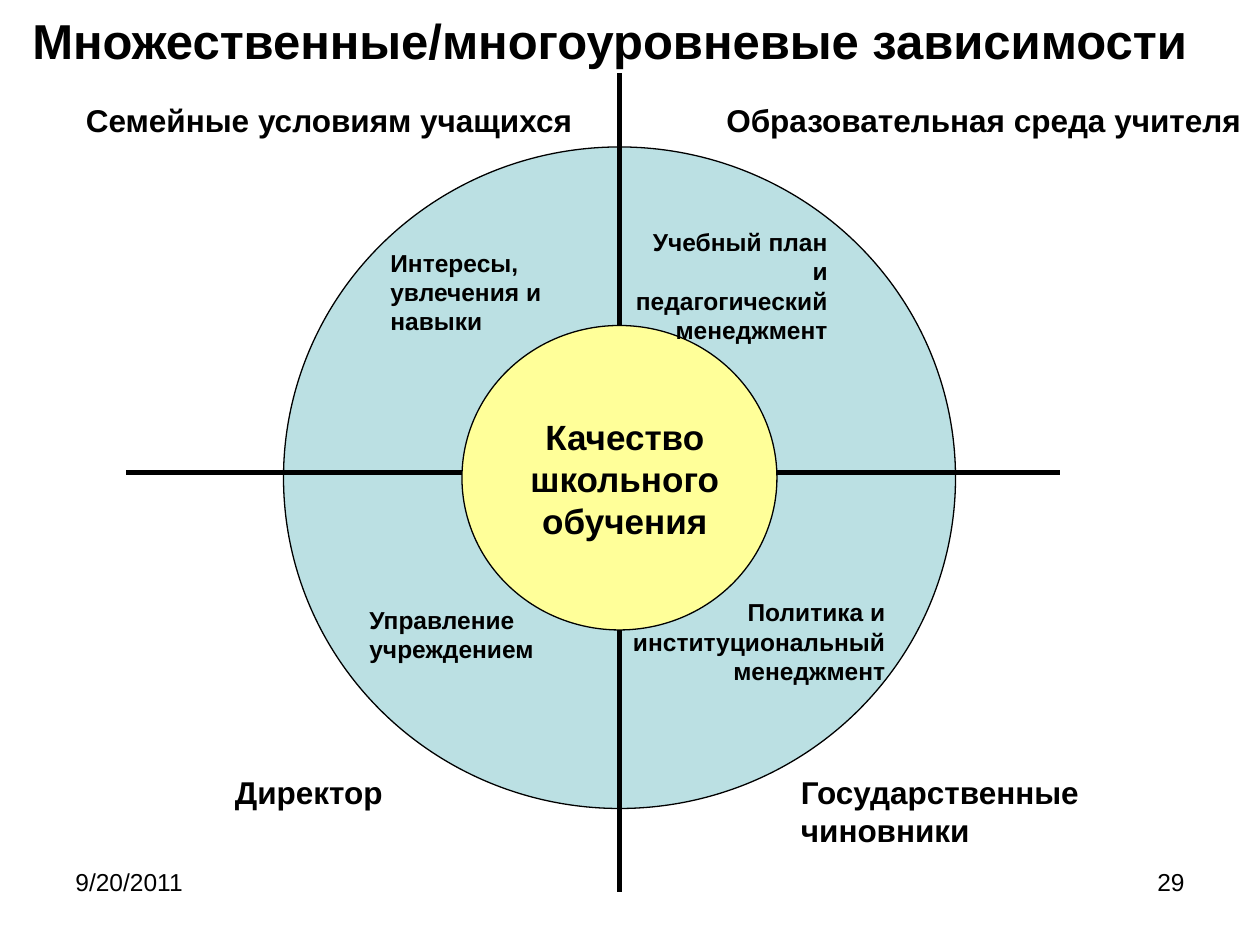
from dataclasses import dataclass

from lxml.etree import SubElement
from pptx import Presentation
from pptx.dml.color import RGBColor
from pptx.enum.shapes import MSO_CONNECTOR, MSO_SHAPE
from pptx.enum.text import MSO_ANCHOR, MSO_AUTO_SIZE, PP_ALIGN
from pptx.oxml.ns import qn
from pptx.util import Inches, Pt

COLUMNS_PER_INCH = 12  # the slide is a grid of 120 columns by 90 rows


@dataclass(frozen=True)
class Theme:
    font: str = "Arial"
    ink: RGBColor = RGBColor(0x00, 0x00, 0x00)
    ring: RGBColor = RGBColor(0xBB, 0xE0, 0xE3)
    core: RGBColor = RGBColor(0xFF, 0xFF, 0x99)
    title: int = 28
    centre: int = 20
    actor: int = 18
    factor: int = 14
    footer: int = 14
    outline: float = 0.75
    axis: float = 3


THEME = Theme()


def grid(*cells):
    return [Inches(cell / COLUMNS_PER_INCH) for cell in cells]


def add_disc(slide, area, colour):
    disc = slide.shapes.add_shape(MSO_SHAPE.OVAL, *grid(*area))
    disc.shadow.inherit = False
    disc.fill.solid()
    disc.fill.fore_color.rgb = colour
    disc.line.color.rgb = THEME.ink
    disc.line.width = Pt(THEME.outline)


def add_axis(slide, *ends):
    axis = slide.shapes.add_connector(MSO_CONNECTOR.STRAIGHT, *grid(*ends))
    axis.line.color.rgb = THEME.ink
    axis.line.width = Pt(THEME.axis)
    SubElement(axis._element.spPr, qn("a:effectLst"))


def add_label(slide, text, area, size, align=PP_ALIGN.LEFT, bold=True,
              wrap=True, anchor=MSO_ANCHOR.TOP, grow=True):
    label = slide.shapes.add_textbox(*grid(*area))
    frame = label.text_frame
    frame.text = text
    frame.word_wrap = wrap
    frame.vertical_anchor = anchor
    frame.auto_size = MSO_AUTO_SIZE.SHAPE_TO_FIT_TEXT if grow else MSO_AUTO_SIZE.NONE
    paragraph = frame.paragraphs[0]
    paragraph.alignment = align
    font = paragraph.runs[0].font
    font.name = THEME.font
    font.size = Pt(size)
    font.bold = bold
    font.color.rgb = THEME.ink


def add_footer(slide):
    row, width, height = 82, 28, 6.2
    for text, column, align in (("9/20/2011", 6, PP_ALIGN.LEFT),
                                ("29", 86, PP_ALIGN.RIGHT)):
        add_label(slide, text, (column, row, width, height), THEME.footer,
                  align, bold=False, grow=False)


def add_target(slide):
    # Ring of factors around the core
    core = left, top, width, height = 44, 31, 30, 29
    add_disc(slide, (27, 14, 64, 63), THEME.ring)
    add_disc(slide, core, THEME.core)

    # Four axes, each stopping at the core
    middle, level = left + width / 2, 45
    add_axis(slide, middle, 7, middle, top)
    add_axis(slide, 12, level, left, level)
    add_axis(slide, left + width, level, 101, level)
    add_axis(slide, middle, top + height, middle, 85)


def add_actors(slide):
    actors = (
        ("Государственные чиновники", (75.1, 73, 31.9, 8.5), True),
        ("Семейные условиям учащихся", (7, 9, 49.2, 4.8), False),
        ("Образовательная среда учителя", (68, 9, 51.6, 4.8), False),
        ("Директор", (21.2, 73, 16.6, 4.8), False),
    )
    for text, area, wrap in actors:
        add_label(slide, text, area, THEME.actor, wrap=wrap)


def add_factors(slide):
    factors = (
        ("Интересы, увлечения и навыки", (36, 23, 19, 9.6), PP_ALIGN.LEFT),
        ("Учебный план и педагогический менеджмент", (59, 21, 21, 12.4), PP_ALIGN.RIGHT),
        ("Управление учреждением", (34, 57, 19.4, 6.8), PP_ALIGN.LEFT),
        ("Политика и институциональный менеджмент", (58.1, 56.3, 27.4, 9.7), PP_ALIGN.RIGHT),
    )
    for text, area, align in factors:
        add_label(slide, text, area, THEME.factor, align)


def main():
    deck = Presentation()
    deck.slide_width, deck.slide_height = grid(120, 90)
    slide = deck.slides.add_slide(deck.slide_layouts[6])

    add_footer(slide)
    add_target(slide)
    add_actors(slide)
    add_factors(slide)

    # Core message and title
    add_label(slide, "Качество школьного обучения", (49, 39, 21, 13.2),
              THEME.centre, PP_ALIGN.CENTER)
    add_label(slide, "Множественные/многоуровневые зависимости",
              (1.9, 0.4, 115.8, 6.8), THEME.title, anchor=MSO_ANCHOR.MIDDLE)

    deck.save("out.pptx")


if __name__ == "__main__":
    main()
